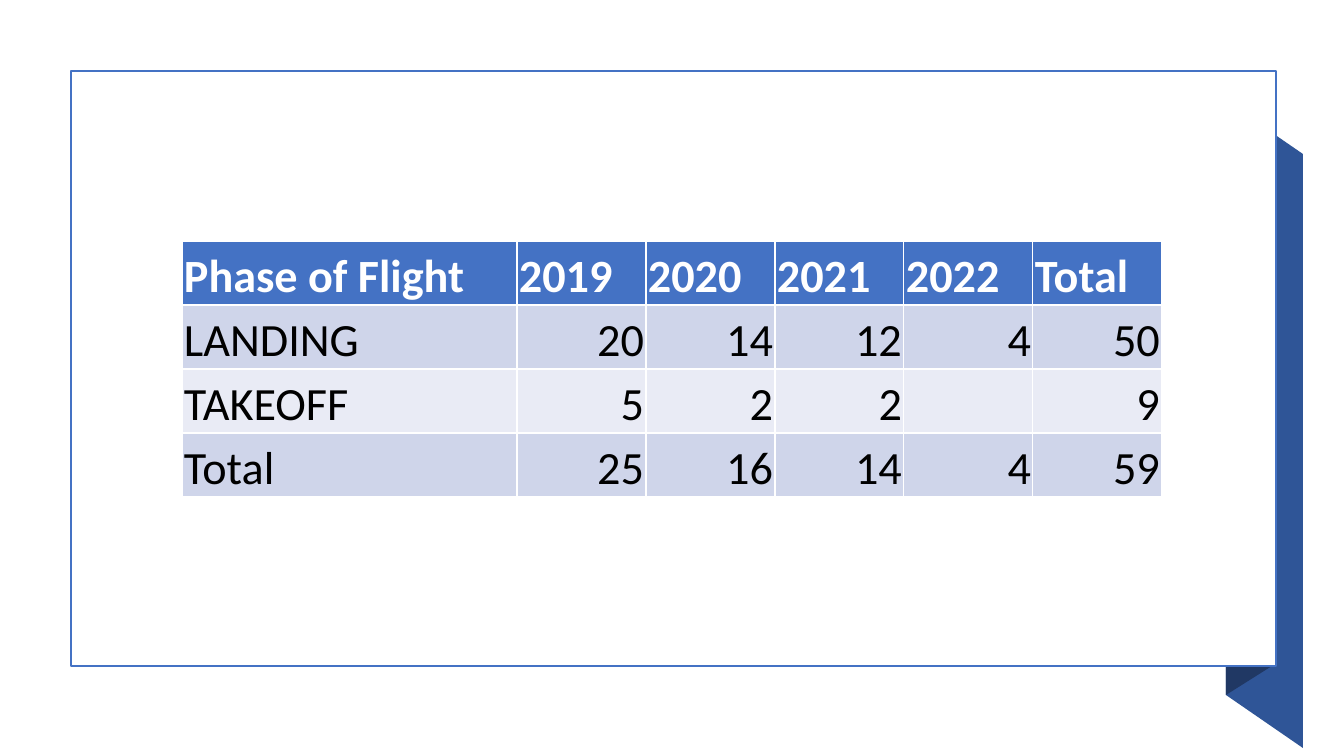
from pptx import Presentation
from pptx import util as u
from pptx.dml.color import RGBColor
from pptx.enum import shapes, text

PX = 914400 / 100.8
COLORS = {
    "white": "FFFFFF",
    "black": "000000",
    "blue": "4472C4",
    "ribbon": "2F5597",
    "fold": "203864",
    "dark band": "CFD5EA",
    "light band": "E9EBF5",
}


def px(length):
    return u.Emu(round(length * PX))


def paint(fill, color):
    fill.solid()
    fill.fore_color.rgb = RGBColor.from_string(COLORS[color])


presentation = Presentation()
presentation.slide_width = px(1344)
presentation.slide_height = px(756)
slide = presentation.slides.add_slide(presentation.slide_layouts[6])

# Folded ribbon behind the panel
ribbon_parts = [
    ("ribbon", [(1303, 748), (1226, 695), (1226, 101), (1303, 154)]),
    ("fold", [(1272, 666), (1226, 695), (1226, 101), (1272, 71)]),
]
for color, points in ribbon_parts:
    builder = slide.shapes.build_freeform(*points[0], scale=PX)
    builder.add_line_segments(points[1:], close=True)
    part = builder.convert_to_shape()
    part.shadow.inherit = False
    paint(part.fill, color)
    part.line.fill.background()

panel = slide.shapes.add_shape(
    shapes.MSO_SHAPE.RECTANGLE, px(71), px(71), px(1205), px(595))
panel.shadow.inherit = False
paint(panel.fill, "white")
paint(panel.line.fill, "blue")
panel.line.width = u.Pt(1)

# Flights by phase and year
rows = [
    ["Phase of Flight", "2019", "2020", "2021", "2022", "Total"],
    ["LANDING", "20", "14", "12", "4", "50"],
    ["TAKEOFF", "5", "2", "2", "", "9"],
    ["Total", "25", "16", "14", "4", "59"],
]
row_fills = ["blue", "dark band", "light band", "dark band"]
column_widths = [335] + [129] * 5
row_height = 64

table = slide.shapes.add_table(
    len(rows), len(column_widths), px(182), px(241),
    px(sum(column_widths)), px(row_height * len(rows))).table
for column, width in zip(table.columns, column_widths):
    column.width = px(width)

for row_index, values in enumerate(rows):
    table.rows[row_index].height = px(row_height)
    is_header = row_index == 0
    for column_index, value in enumerate(values):
        cell = table.cell(row_index, column_index)
        paint(cell.fill, row_fills[row_index])
        cell.vertical_anchor = text.MSO_ANCHOR.BOTTOM
        cell.margin_left = cell.margin_right = cell.margin_top = px(2)
        cell.margin_bottom = 0
        if not value:
            continue
        paragraph = cell.text_frame.paragraphs[0]
        is_number = column_index > 0 and not is_header
        paragraph.alignment = (
            text.PP_ALIGN.RIGHT if is_number else text.PP_ALIGN.LEFT)
        run = paragraph.add_run()
        run.text = value
        run.font.name = "Calibri"
        run.font.size = u.Pt(33)
        run.font.bold = is_header
        paint(run.font.fill, "white" if is_header else "black")

presentation.save("out.pptx")
